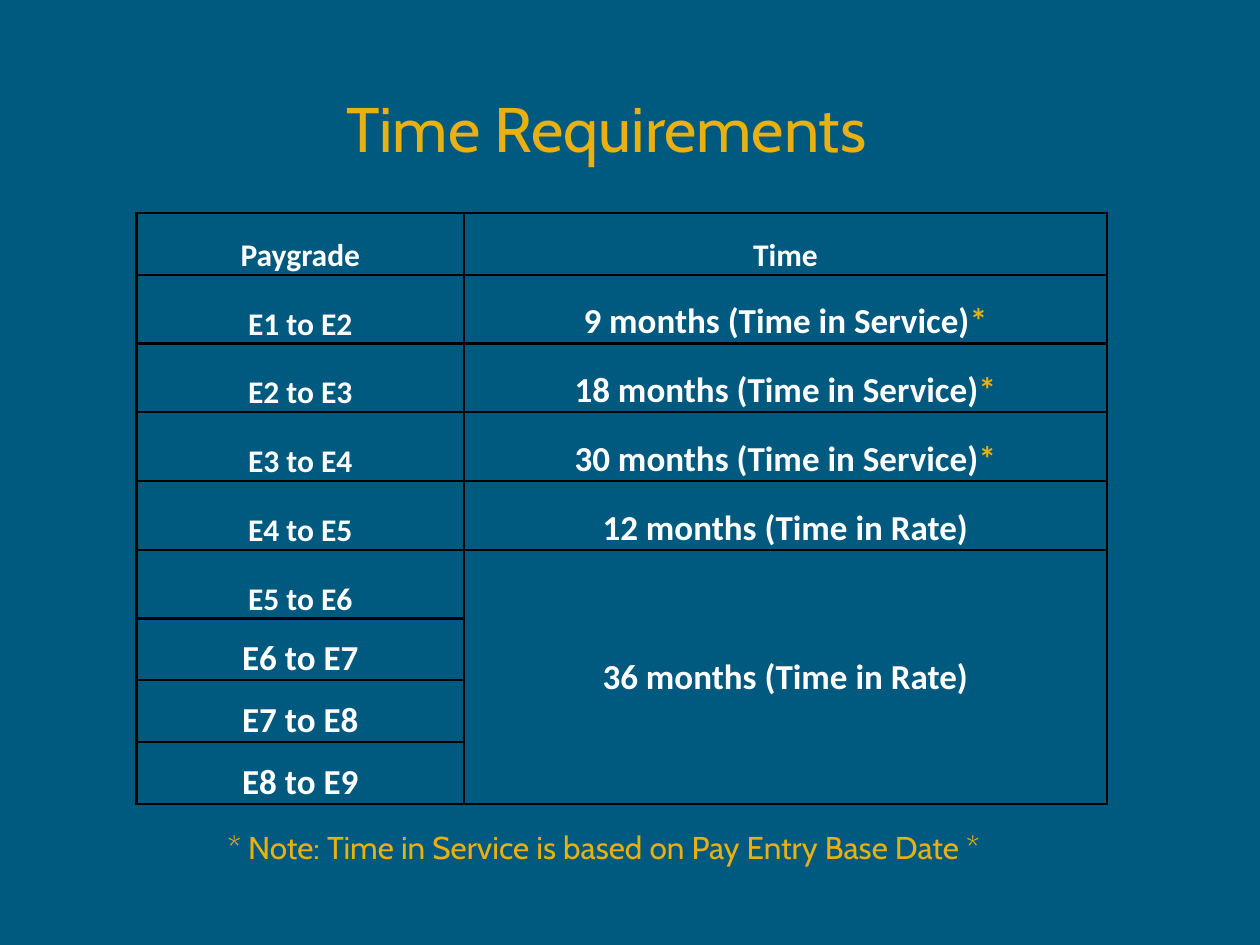
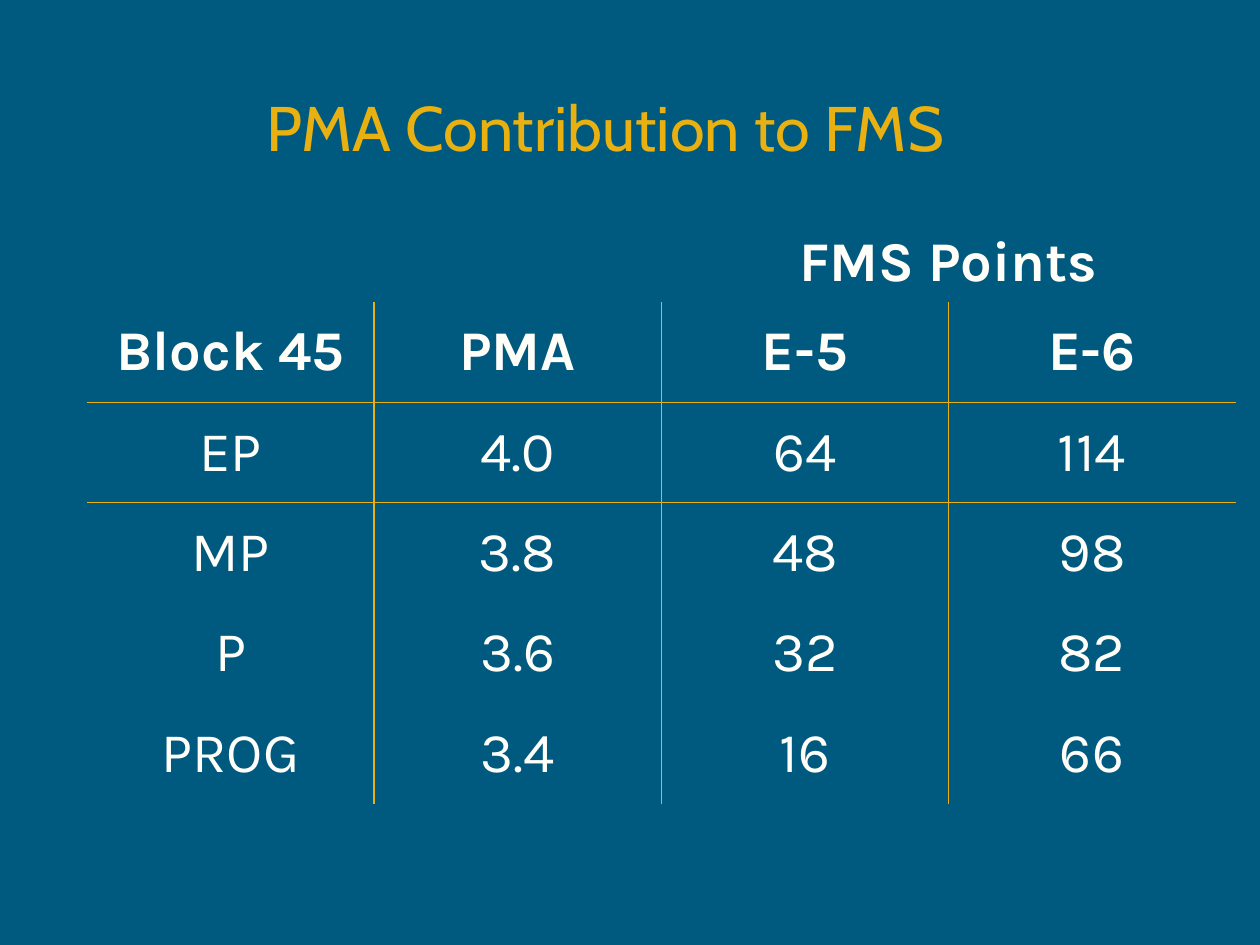
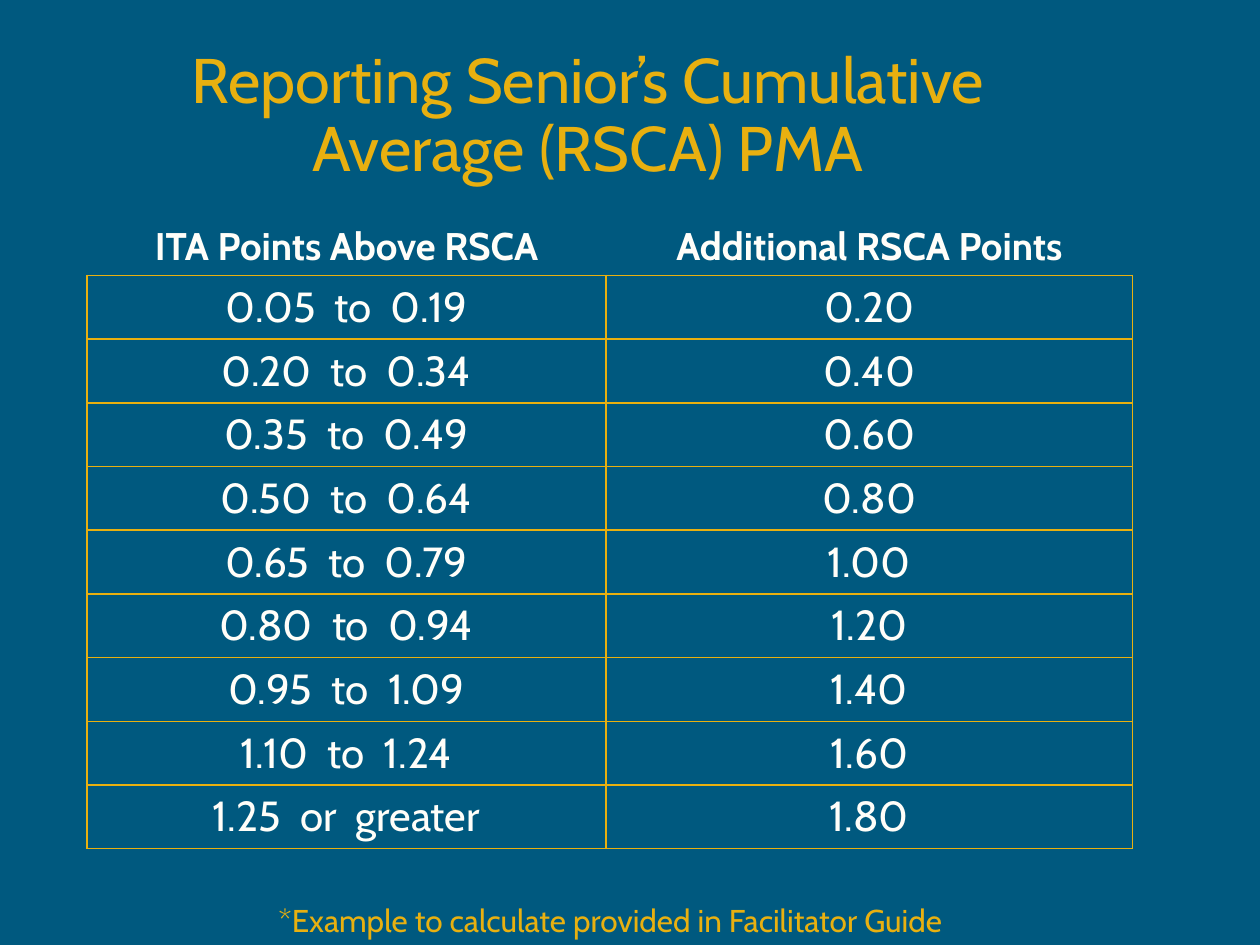
from lxml import etree
from pptx import Presentation
from pptx.dml.color import RGBColor
from pptx.enum.text import MSO_ANCHOR, PP_ALIGN
from pptx.oxml.ns import qn
from pptx.util import Pt

NAVY = RGBColor(0x00, 0x59, 0x7F)
GOLD = RGBColor(0xE8, 0xB0, 0x10)
BLACK = RGBColor(0, 0, 0)
WHITE = RGBColor(0xFF, 0xFF, 0xFF)
CREAM = RGBColor(0xFF, 0xFE, 0xF9)

TIME_ROWS = [
    ("Paygrade", "Time"),
    ("E1 to E2", "9 months (Time in Service)*"),
    ("E2 to E3", "18 months (Time in Service)*"),
    ("E3 to E4", "30 months (Time in Service)*"),
    ("E4 to E5", "12 months (Time in Rate)"),
    ("E5 to E6", "36 months (Time in Rate)"),
    ("E6 to E7", ""),
    ("E7 to E8", ""),
    ("E8 to E9", ""),
]
PMA_ROWS = [
    ("", "", "FMS Points", ""),
    ("Block 45", "PMA", "E-5", "E-6"),
    ("EP", "4.0", "64", "114"),
    ("MP", "3.8", "48", "98"),
    ("P", "3.6", "32", "82"),
    ("PROG", "3.4", "16", "66"),
]
RSCA_ROWS = [
    ("ITA Points Above RSCA", "Additional RSCA Points"),
    ("0.05 to 0.19", "0.20"),
    ("0.20 to 0.34", "0.40"),
    ("0.35 to 0.49", "0.60"),
    ("0.50 to 0.64", "0.80"),
    ("0.65 to 0.79", "1.00"),
    ("0.80 to 0.94", "1.20"),
    ("0.95 to 1.09", "1.40"),
    ("1.10 to 1.24", "1.60"),
    ("1.25 or greater", "1.80"),
]
WORD_GAP = 5.5  # extra width of the spaces inside the RSCA ranges


def add_run(p, content, font, size, color, bold=False, spacing=0):
    r = p.add_run()
    r.text = content
    r.font.name, r.font.size, r.font.bold = font, Pt(size), bold
    r.font.color.rgb = color
    if spacing:
        r._r.get_or_add_rPr().set("spc", str(int(spacing * 100)))


def add_text(slide, content, box, size, title=False):
    tf = slide.shapes.add_textbox(*map(Pt, box)).text_frame
    tf.word_wrap = True
    p = tf.paragraphs[0]
    if title:
        tf.vertical_anchor = MSO_ANCHOR.MIDDLE
        p.alignment, p.line_spacing = PP_ALIGN.CENTER, 0.9
    add_run(p, content, "Cabin", size, GOLD)


def add_slide(prs, title, box):
    slide = prs.slides.add_slide(prs.slide_layouts[6])
    slide.background.fill.solid()
    slide.background.fill.fore_color.rgb = NAVY
    add_text(slide, title, box, 36, title=True)
    return slide


def set_borders(cell, sides, color, width):
    """Draw the named sides (of "LRTB") and clear the others."""
    tc_pr = cell._tc.get_or_add_tcPr()
    for side in "LRTB":
        ln = etree.SubElement(tc_pr, qn("a:ln" + side), w=str(Pt(width)))
        if side in sides:
            fill = etree.SubElement(ln, qn("a:solidFill"))
            etree.SubElement(fill, qn("a:srgbClr"), val=str(color))
        else:
            etree.SubElement(ln, qn("a:noFill"))


def add_table(slide, rows, left, top, widths, heights, sides, color, width):
    """Add an unfilled table; sides(row, col) names the borders of a cell."""
    table = slide.shapes.add_table(len(rows), len(widths), Pt(left), Pt(top),
                                   Pt(sum(widths)), Pt(sum(heights))).table
    table.first_row = table.horz_banding = False
    for column, w in zip(table.columns, widths):
        column.width = Pt(w)
    for row, h in zip(table.rows, heights):
        row.height = Pt(h)
    for i in range(len(rows)):
        for j in range(len(widths)):
            cell = table.cell(i, j)
            set_borders(cell, sides(i, j), color, width)
            cell.fill.background()
            cell.vertical_anchor = MSO_ANCHOR.MIDDLE
            cell.text_frame.paragraphs[0].alignment = PP_ALIGN.CENTER
    return table


def filled_cells(table, rows):
    """Yield row, column, cell, paragraph and text of each cell with text."""
    for i, row in enumerate(rows):
        for j, content in enumerate(row):
            if content:
                cell = table.cell(i, j)
                yield i, j, cell, cell.text_frame.paragraphs[0], content


def time_slide(prs):
    slide = add_slide(prs, "Time Requirements", (65, 29, 563, 93))
    heights = [35.3] + [39.3] * 5 + [35.3] * 3
    table = add_table(slide, TIME_ROWS, 78, 121.7, [187.2, 367.2], heights,
                      lambda i, j: "LRTB", BLACK, 1.5)
    table.cell(5, 1).merge(table.cell(8, 1))
    for i, j, cell, p, content in filled_cells(table, TIME_ROWS):
        cell.margin_left = cell.margin_right = cell.margin_top = Pt(0.7)
        cell.margin_bottom = 0
        if (i, j) != (5, 1):
            cell.vertical_anchor = MSO_ANCHOR.BOTTOM
        size = 18 if i == 0 or (j == 0 and i < 6) else 20
        add_run(p, content.rstrip("*"), "Calibri", size, WHITE, bold=True)
        if content.endswith("*"):
            add_run(p, "*", "Calibri", size, GOLD, bold=True)
    add_text(slide, "* Note: Time in Service is based on Pay Entry Base Date *",
             (123, 469.5, 529, 29), 18)


def pma_sides(i, j):
    if i == 0:
        return ""
    return (("L" if j > 0 else "") + ("R" if j < 3 else "")
            + ("T" if i in (2, 3) else "") + ("B" if i in (1, 2) else ""))


def pma_slide(prs):
    slide = add_slide(prs, "PMA Contribution to FMS", (124, 23, 443.5, 104.4))
    table = add_table(slide, PMA_ROWS, 49.7, 115.2, [164.1] * 4, [57.36] * 6,
                      pma_sides, GOLD, 1)
    table.cell(0, 2).merge(table.cell(0, 3))
    table.cell(0, 2).vertical_anchor = MSO_ANCHOR.BOTTOM
    for i, j, cell, p, content in filled_cells(table, PMA_ROWS):
        add_run(p, content, "Karla", 32, CREAM, bold=i < 2)


def rsca_slide(prs):
    slide = add_slide(prs, "Reporting Senior’s Cumulative Average (RSCA) PMA",
                      (49.7, 20.2, 572.4, 93))
    table = add_table(slide, RSCA_ROWS, 49.7, 123.8, [296.6, 301],
                      [33.3] + [36.4] * 9,
                      lambda i, j: "LRTB" if i else "B", GOLD, 1)
    for i, j, cell, p, content in filled_cells(table, RSCA_ROWS):
        if i == 0:
            add_run(p, content, "Cabin", 22, CREAM, bold=True)
            continue
        for k, word in enumerate(content.split()):
            if k:
                add_run(p, " ", "Cabin", 24, CREAM, spacing=WORD_GAP)
            add_run(p, word, "Cabin", 24, CREAM)
    add_text(slide, "*Example to calculate provided in Facilitator Guide",
             (152, 511.2, 422, 29), 18)


def main():
    prs = Presentation()
    prs.slide_width, prs.slide_height = Pt(720), Pt(540)
    time_slide(prs)
    pma_slide(prs)
    rsca_slide(prs)
    prs.save("out.pptx")


if __name__ == "__main__":
    main()
